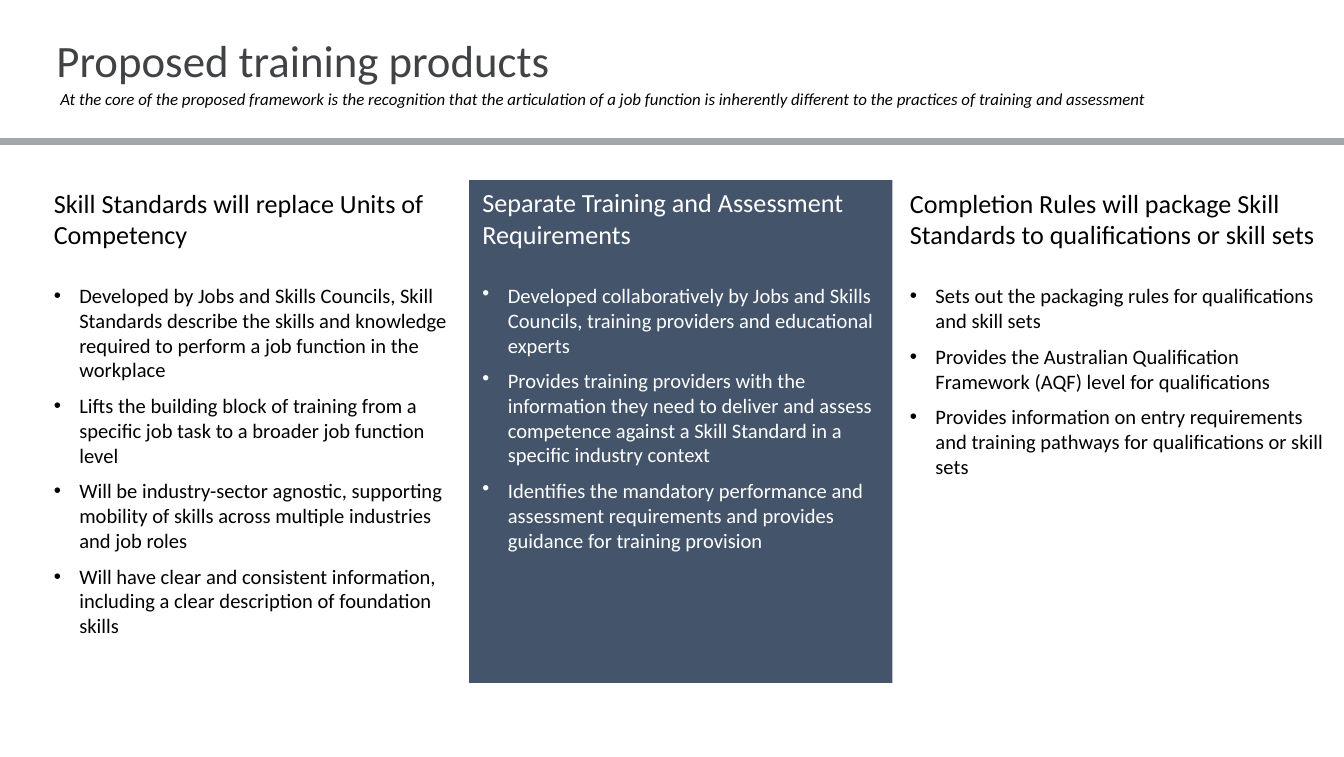
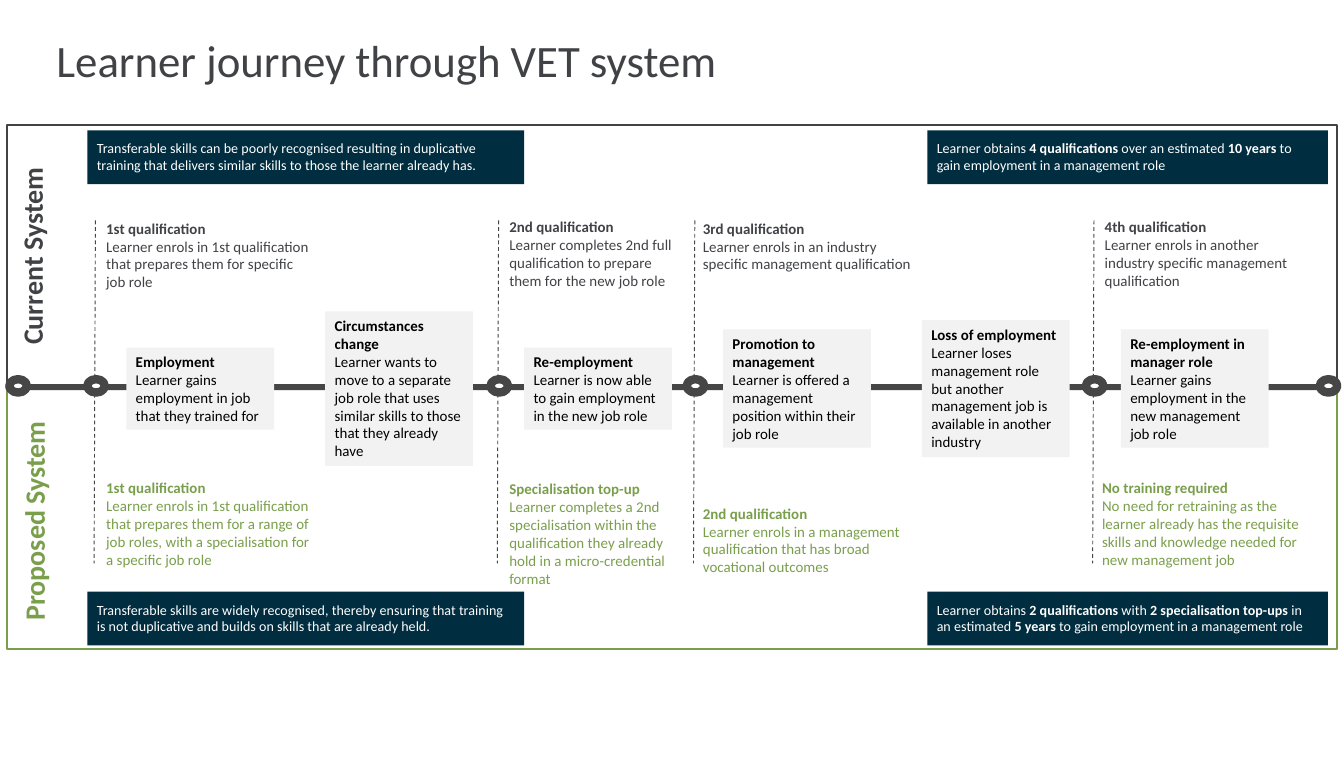
from lxml.etree import SubElement
from pptx import Presentation
from pptx.dml.color import RGBColor
from pptx.enum.dml import MSO_LINE
from pptx.enum.shapes import MSO_CONNECTOR, MSO_SHAPE
from pptx.enum.text import MSO_ANCHOR, MSO_AUTO_SIZE, PP_ALIGN
from pptx.oxml.ns import qn
from pptx.util import Inches, Pt

FONT = "Calibri"
BLACK = RGBColor(0x00, 0x00, 0x00)
WHITE = RGBColor(0xFF, 0xFF, 0xFF)
CHARCOAL = RGBColor(0x40, 0x42, 0x46)
TRACK_GREY = RGBColor(0x46, 0x46, 0x46)
RULE_GREY = RGBColor(0xA4, 0xA7, 0xA9)
PALE_GREY = RGBColor(0xF2, 0xF2, 0xF2)
SLATE = RGBColor(0x44, 0x54, 0x6A)
NAVY = RGBColor(0x00, 0x2D, 0x3F)
GREEN = RGBColor(0x7A, 0x9F, 0x4C)

EVEN_INSETS = (0.07, 0.07)
SNUG_INSETS = (0.07, 0.04)
TRACK_Y = 2.89

SKILL_STANDARDS = ("Skill Standards will replace Units of Competency", [
    "Developed by Jobs and Skills Councils, Skill Standards describe the skills and "
    "knowledge required to perform a job function in the workplace",
    "Lifts the building block of training from a specific job task to a broader job function level",
    "Will be industry-sector agnostic, supporting mobility of skills across multiple "
    "industries and job roles",
    "Will have clear and consistent information, including a clear description of foundation skills",
])
TRAINING_REQUIREMENTS = ("Separate Training and Assessment Requirements", [
    "Developed collaboratively by Jobs and Skills Councils, training providers and educational experts",
    "Provides training providers with the information they need to deliver and assess "
    "competence against a Skill Standard in a specific industry context",
    "Identifies the mandatory performance and assessment requirements and provides "
    "guidance for training provision",
])
COMPLETION_RULES = ("Completion Rules will package Skill Standards to qualifications or skill sets", [
    "Sets out the packaging rules for qualifications and skill sets",
    "Provides the Australian Qualification Framework (AQF) level for qualifications",
    "Provides information on entry requirements and training pathways for "
    "qualifications or skill sets",
])

# left, top, width, height, colour, heading, detail
QUALIFICATIONS = [
    (0.72, 1.59, 1.69, 0.61, CHARCOAL, "1st qualification",
     "Learner enrols in 1st qualification that prepares them for specific job role"),
    (3.72, 1.58, 1.44, 0.61, CHARCOAL, "2nd qualification",
     "Learner completes 2nd full qualification to prepare them for the new job role"),
    (5.16, 1.59, 1.73, 0.48, CHARCOAL, "3rd qualification",
     "Learner enrols in an industry specific management qualification"),
    (8.15, 1.58, 1.66, 0.61, CHARCOAL, "4th qualification",
     "Learner enrols in another industry specific management qualification"),
    (0.72, 3.52, 1.69, 0.75, GREEN, "1st qualification",
     "Learner enrols in 1st qualification that prepares them for a range of job roles, "
     "with a specialisation for a specific job role"),
    (3.72, 3.53, 1.44, 0.88, GREEN, "Specialisation top-up",
     "Learner completes a 2nd specialisation within the qualification they already hold "
     "in a micro-credential format"),
    (5.16, 3.71, 1.72, 0.61, GREEN, "2nd qualification",
     "Learner enrols in a management qualification that has broad vocational outcomes"),
    (8.13, 3.52, 1.65, 0.75, GREEN, "No training required",
     "No need for retraining as the learner already has the requisite skills and "
     "knowledge needed for new management job"),
]

# height, heading, detail
CAREER_STAGES = [
    (0.61, "Employment", "Learner gains employment in job that they trained for"),
    (1.15, "Circumstances change",
     "Learner wants to move to a separate job role that uses similar skills to those that they already have"),
    (0.61, "Re-employment", "Learner is now able to gain employment in the new job role"),
    (0.88, "Promotion to management", "Learner is offered a management position within their job role"),
    (1.02, "Loss of employment",
     "Learner loses management role but another management job is available in another industry"),
    (0.88, "Re-employment in manager role", "Learner gains employment in the new management job role"),
]

# left, top, width, spans of (text, bold)
CALLOUTS = [
    (0.65, 0.97, 3.25, [
        ("Transferable skills can be poorly recognised resulting in duplicative training "
         "that delivers similar skills to those the learner already has.", False)]),
    (0.65, 4.4, 3.25, [
        ("Transferable skills are widely recognised, thereby ensuring that training is not "
         "duplicative and builds on skills that are already held.", False)]),
    (6.9, 0.97, 2.98, [
        ("Learner obtains ", False), ("4 qualifications", True), (" over an estimated ", False),
        ("10 years", True), (" to gain employment in a management role", False)]),
    (6.9, 4.4, 2.98, [
        ("Learner obtains ", False), ("2 qualifications", True), (" with ", False),
        ("2 specialisation top-ups ", True), ("in an estimated ", False), ("5 years ", True),
        ("to gain employment in a management role", False)]),
]


def place(shape, left, top, width, height):
    shape.left, shape.top = Inches(left), Inches(top)
    shape.width, shape.height = Inches(width), Inches(height)


def prepare_frame(shape, insets=(0.1, 0.05), anchor=MSO_ANCHOR.TOP):
    frame = shape.text_frame
    frame.word_wrap = True
    frame.auto_size = MSO_AUTO_SIZE.NONE
    frame.vertical_anchor = anchor
    frame.margin_left = frame.margin_right = Inches(insets[0])
    frame.margin_top = frame.margin_bottom = Inches(insets[1])
    return frame


def add_span(para, text, size, color, bold=False, italic=False):
    span = para.add_run()
    span.text = text
    font = span.font
    font.name, font.size = FONT, Pt(size)
    font.bold, font.italic = bold, italic
    font.color.rgb = color


def next_para(frame):
    """Return the empty first paragraph, or a new one after existing text."""
    first = frame.paragraphs[0]
    para = frame.add_paragraph() if first.runs else first
    para.alignment = PP_ALIGN.LEFT
    return para


def set_bullet(para, char=None):
    """Give the paragraph a hanging bullet, or none at all."""
    props = para._p.get_or_add_pPr()
    indent = Inches(0.19) if char else 0
    props.set("marL", str(indent))
    props.set("indent", str(-indent))
    if char:
        SubElement(props, qn("a:buChar")).set("char", char)
    else:
        SubElement(props, qn("a:buNone"))


def add_box(page, kind, bounds, fill=None, line=None, line_width=1):
    box = page.shapes.add_shape(kind, *map(Inches, bounds))
    box.shadow.inherit = False
    if fill is None:
        box.fill.background()
    else:
        box.fill.solid()
        box.fill.fore_color.rgb = fill
    if line is None:
        box.line.fill.background()
    else:
        box.line.color.rgb = line
        box.line.width = Pt(line_width)
    return box


def add_text_box(page, bounds):
    return page.shapes.add_textbox(*map(Inches, bounds))


def add_page(deck, layout, title):
    page = deck.slides.add_slide(deck.slide_layouts.get_by_name(layout))
    place(page.shapes.title, 0.35, 0.22, 8, 0.45)
    frame = prepare_frame(page.shapes.title, EVEN_INSETS, MSO_ANCHOR.MIDDLE)
    add_span(next_para(frame), title, 24, CHARCOAL)
    return page


def fill_column(shape, column, color):
    heading, points = column
    frame = prepare_frame(shape)
    para = next_para(frame)
    set_bullet(para)
    para.space_before, para.space_after = Pt(0), Pt(12)
    add_span(para, heading, 14, color)
    for point in points:
        para = next_para(frame)
        set_bullet(para, "•")
        para.space_before = Pt(6)
        add_span(para, point, 11, color)


def write_heading_and_detail(shape, heading, detail, color):
    frame = prepare_frame(shape, SNUG_INSETS)
    add_span(next_para(frame), heading, 8, color, bold=True)
    add_span(next_para(frame), detail, 8, color)


def add_side_label(page, bounds, text, color):
    label = add_text_box(page, bounds)
    label.rotation = 270
    para = next_para(prepare_frame(label, SNUG_INSETS))
    para.alignment = PP_ALIGN.CENTER
    add_span(para, text, 15, color, bold=True)


def add_dashed_line(page, x):
    line = page.shapes.add_connector(
        MSO_CONNECTOR.STRAIGHT, Inches(x), Inches(1.64), Inches(x - 0.01), Inches(4.19))
    line.line.color.rgb = TRACK_GREY
    line.line.width = Pt(0.5)
    line.line.dash_style = MSO_LINE.DASH
    SubElement(line._element.spPr, qn("a:effectLst"))


def add_track_dot(page, x):
    add_box(page, MSO_SHAPE.OVAL, (x - 0.06, 2.82, 0.13, 0.1), WHITE, TRACK_GREY, 4.5)


def build_products_page(deck):
    page = add_page(deck, "Two Content", "Proposed training products")
    left, right = page.placeholders[1], page.placeholders[2]
    place(left, 0.3, 1.34, 3.15, 3.48)
    place(right, 6.67, 1.34, 3.31, 2.93)
    middle = add_box(page, MSO_SHAPE.RECTANGLE, (3.49, 1.34, 3.15, 3.74), SLATE)
    fill_column(left, SKILL_STANDARDS, BLACK)
    fill_column(middle, TRAINING_REQUIREMENTS, WHITE)
    fill_column(right, COMPLETION_RULES, BLACK)

    subtitle = prepare_frame(add_text_box(page, (0.38, 0.59, 9.28, 0.3)), EVEN_INSETS)
    add_span(next_para(subtitle),
             "At the core of the proposed framework is the recognition that the articulation of a job "
             "function is inherently different to the practices of training and assessment",
             9, BLACK, italic=True)
    add_box(page, MSO_SHAPE.RECTANGLE, (0, 1.03, 10, 0.04), RULE_GREY, RULE_GREY)


def build_journey_page(deck):
    page = add_page(deck, "Title Only", "Learner journey through VET system")
    add_box(page, MSO_SHAPE.RECTANGLE, (0.05, TRACK_Y, 9.9, 1.94), line=GREEN)
    add_box(page, MSO_SHAPE.RECTANGLE, (0.05, 0.93, 9.9, 1.96), line=CHARCOAL)
    add_side_label(page, (-0.74, 1.74, 1.95, 0.33), "Current System", CHARCOAL)
    add_side_label(page, (-0.71, 3.71, 1.92, 0.33), "Proposed System", GREEN)

    for *bounds, color, heading, detail in QUALIFICATIONS:
        write_heading_and_detail(add_text_box(page, bounds), heading, detail, color)

    add_box(page, MSO_SHAPE.RIGHT_ARROW, (0.05, 2.85, 9.84, 0.06), TRACK_GREY, TRACK_GREY)
    for x in (0.13, 9.88):
        add_track_dot(page, x)

    for index, (height, heading, detail) in enumerate(CAREER_STAGES):
        bounds = (0.94 + 1.48 * index, TRACK_Y - height / 2, 1.1, height)
        stage = add_box(page, MSO_SHAPE.RECTANGLE, bounds, PALE_GREY)
        write_heading_and_detail(stage, heading, detail, BLACK)

    for x in (0.71, 3.71, 5.17, 8.14):
        add_dashed_line(page, x)
        add_track_dot(page, x)

    for left, top, width, spans in CALLOUTS:
        callout = add_box(page, MSO_SHAPE.RECTANGLE, (left, top, width, 0.4), NAVY)
        para = next_para(prepare_frame(callout, EVEN_INSETS))
        for text, bold in spans:
            add_span(para, text, 7.5, WHITE, bold)


def main():
    deck = Presentation()
    deck.slide_width, deck.slide_height = Inches(10), Inches(5.63)
    build_products_page(deck)
    build_journey_page(deck)
    deck.save("out.pptx")


if __name__ == "__main__":
    main()
